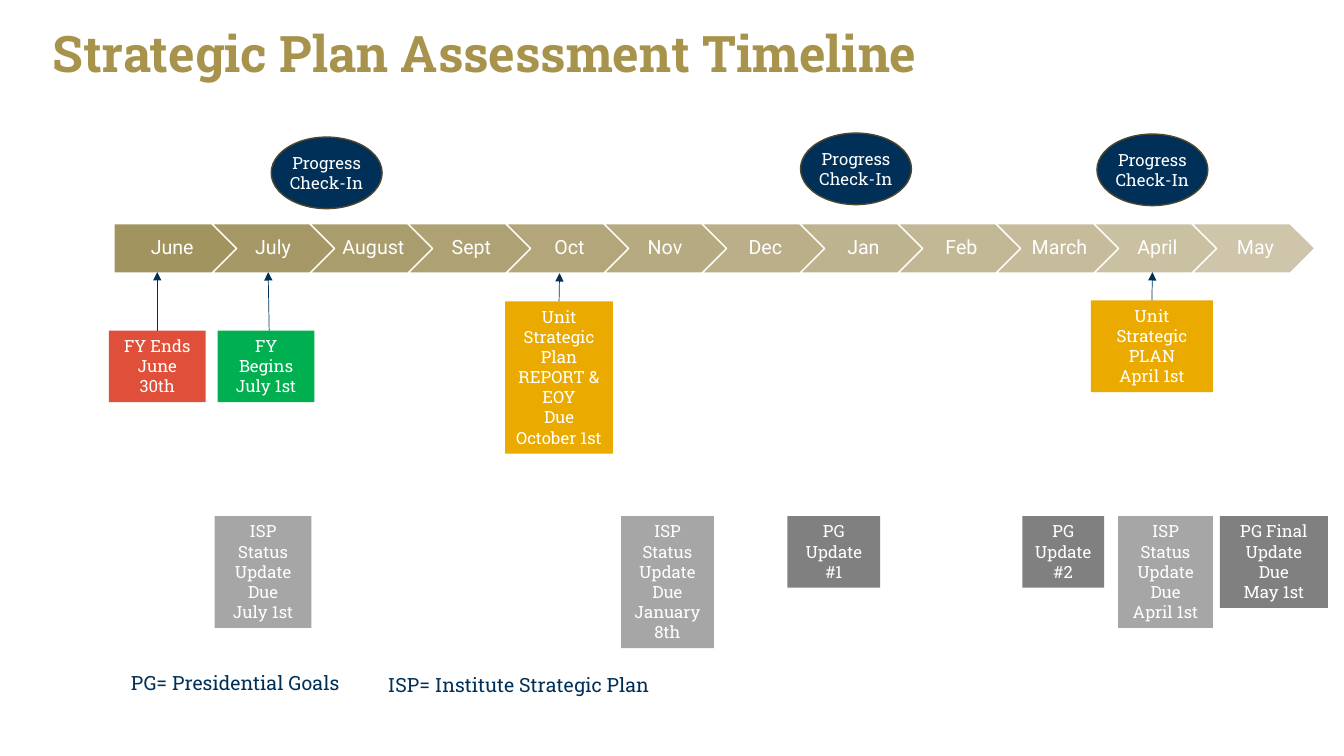
from lxml.etree import SubElement
from pptx import Presentation
from pptx.dml.color import RGBColor
from pptx.enum.shapes import MSO_CONNECTOR, MSO_SHAPE
from pptx.enum.text import MSO_ANCHOR, MSO_AUTO_SIZE, PP_ALIGN
from pptx.oxml.ns import qn
from pptx.util import Inches, Pt

COLORS = {
    "gold": "A7934B", "navy": "003057", "white": "FFFFFF", "olive": "4E472E",
    "first_month": "A2945F", "last_month": "CEC5AA",
    "amber": "EAAA00", "red": "E04F39", "green": "00B050",
    "light_gray": "A6A6A6", "dark_gray": "808080",
}
SERIF, SANS = "Roboto Slab", "Roboto"
MONTHS = ["June", "July ", "August", "Sept", "Oct", "Nov ",
          "Dec", "Jan", "Feb", "March", "April", "May"]
MONTH_LEFT, MONTH_TOP, MONTH_STEP = 1.13, 2.22, 0.972
MONTH_WIDTH, MONTH_HEIGHT = 1.22, 0.49
CHECK_INS = [(2.69, 1.36), (7.94, 1.32), (10.88, 1.33)]
CARDS = [
    ("amber", (5.01, 2.99, 1.07, 1.51),
     ["Unit Strategic Plan REPORT & EOY", "Due October 1st"]),
    ("amber", (10.82, 2.98, 1.21, 0.91), ["Unit Strategic PLAN", "April 1st"]),
    ("red", (1.08, 3.28, 0.96, 0.71), ["FY Ends June 30th"]),
    ("green", (2.16, 3.28, 0.96, 0.71), ["FY Begins July 1st"]),
    ("light_gray", (2.13, 5.12, 0.96, 1.11), ["ISP Status Update Due", "July 1st"]),
    ("light_gray", (6.16, 5.12, 0.92, 1.31), ["ISP Status Update Due", "January 8th"]),
    ("light_gray", (11.09, 5.12, 0.94, 1.11), ["ISP Status Update Due", "April 1st"]),
    ("dark_gray", (7.81, 5.12, 0.92, 0.71), ["PG Update #1"]),
    ("dark_gray", (10.14, 5.12, 0.81, 0.71), ["PG Update #2"]),
    ("dark_gray", (12.1, 5.12, 1.07, 0.91), ["PG Final Update Due", "May 1st"]),
]
LEGEND = [((1.2, 6.61, 2.5, 0.34), "PG= Presidential Goals"),
          ((3.75, 6.63, 2.86, 0.34), "ISP= Institute Strategic Plan")]


def rgb(name):
    """Return the named colour."""
    return RGBColor.from_string(COLORS[name])


def month_color(index):
    """Return the colour of a month on the way from the first to the last."""
    first, last = rgb("first_month"), rgb("last_month")
    share = index / (len(MONTHS) - 1)
    return RGBColor(*(round(a + (b - a) * share) for a, b in zip(first, last)))


def write(box, lines, size, color="white", font=SERIF, align=PP_ALIGN.CENTER,
          anchor=MSO_ANCHOR.MIDDLE, insets=(0.1, 0.05, 0.1, 0.05),
          spacing=None, bold=False, fit=MSO_AUTO_SIZE.NONE):
    """Fill a box with formatted paragraphs."""
    frame = box.text_frame
    frame.word_wrap = True
    frame.auto_size = fit
    frame.vertical_anchor = anchor
    (frame.margin_left, frame.margin_top,
     frame.margin_right, frame.margin_bottom) = map(Inches, insets)
    for index, line in enumerate(lines):
        para = frame.add_paragraph() if index else frame.paragraphs[0]
        para.alignment = align
        para.line_spacing = spacing
        span = para.add_run()
        span.text = line
        span.font.name = font
        span.font.size = Pt(size)
        span.font.bold = bold
        span.font.color.rgb = rgb(color)


def add_filled(page, kind, place, fill, line=None):
    """Add a flat shape with a fill and, if named, a one-point outline."""
    shape = page.shapes.add_shape(kind, *map(Inches, place))
    shape.shadow.inherit = False
    shape.fill.solid()
    shape.fill.fore_color.rgb = fill
    if line:
        shape.line.color.rgb = rgb(line)
        shape.line.width = Pt(1)
    else:
        shape.line.fill.background()
    return shape


def add_title(page):
    """Place and format the slide title."""
    title = page.shapes.title
    title.left, title.top = Inches(0.42), Inches(0)
    title.width, title.height = Inches(12.5), Inches(1.11)
    write(title, ["Strategic Plan Assessment Timeline"], 36, "gold",
          align=PP_ALIGN.LEFT, spacing=0.9, bold=True)


def add_month(page, index, name):
    """Add one month of the timeline band."""
    kind = MSO_SHAPE.CHEVRON if index else MSO_SHAPE.PENTAGON
    place = (MONTH_LEFT + index * MONTH_STEP, MONTH_TOP, MONTH_WIDTH, MONTH_HEIGHT)
    month = add_filled(page, kind, place, month_color(index), "white")
    write(month, [name], 14, font=SANS, spacing=0.9,
          insets=(0.06 if index else 0.08, 0.04, 0.02, 0.04))


def add_check_in(page, left, top):
    """Add a progress check-in oval."""
    oval = add_filled(page, MSO_SHAPE.OVAL, (left, top, 1.1, 0.71),
                      rgb("navy"), "olive")
    write(oval, ["Progress Check-In"], 12, insets=(0, 0.05, 0, 0.05))


def add_card(page, color, place, lines):
    """Add a coloured deadline card and return it."""
    card = add_filled(page, MSO_SHAPE.RECTANGLE, place, rgb(color))
    write(card, lines, 12, anchor=MSO_ANCHOR.TOP,
          fit=MSO_AUTO_SIZE.SHAPE_TO_FIT_TEXT)
    return card


def add_legend(page, place, text):
    """Add the meaning of an abbreviation."""
    box = page.shapes.add_textbox(*map(Inches, place))
    write(box, [text], 14, "navy", align=PP_ALIGN.LEFT, anchor=MSO_ANCHOR.TOP,
          fit=MSO_AUTO_SIZE.SHAPE_TO_FIT_TEXT)


def add_arrow(page, start, end, card=None):
    """Add an arrow up to the band, joined to the top of a card if given."""
    arrow = page.shapes.add_connector(MSO_CONNECTOR.STRAIGHT,
                                      *map(Inches, start + end))
    if card is not None:
        arrow.begin_connect(card, 0)
    arrow.line.color.rgb = rgb("navy")
    arrow.line.width = Pt(0.5)
    SubElement(arrow.line._get_or_add_ln(), qn("a:tailEnd"), type="triangle")
    SubElement(arrow._element.spPr, qn("a:effectLst"))


def main():
    """Build the timeline slide and save it."""
    deck = Presentation()
    deck.slide_width, deck.slide_height = Inches(13.33), Inches(7.5)
    page = deck.slides.add_slide(deck.slide_layouts[5])
    add_title(page)
    for index, name in enumerate(MONTHS):
        add_month(page, index, name)
    for left, top in CHECK_INS:
        add_check_in(page, left, top)
    cards = [add_card(page, *card) for card in CARDS]
    report, plan, year_end = cards[:3]
    for place, text in LEGEND:
        add_legend(page, place, text)
    add_arrow(page, (1.56, 3.28), (1.56, 2.7), year_end)
    add_arrow(page, (2.67, 3.28), (2.66, 2.7))
    add_arrow(page, (5.55, 2.99), (5.55, 2.71), report)
    add_arrow(page, (11.43, 2.98), (11.43, 2.7), plan)
    deck.save("out.pptx")


if __name__ == "__main__":
    main()
